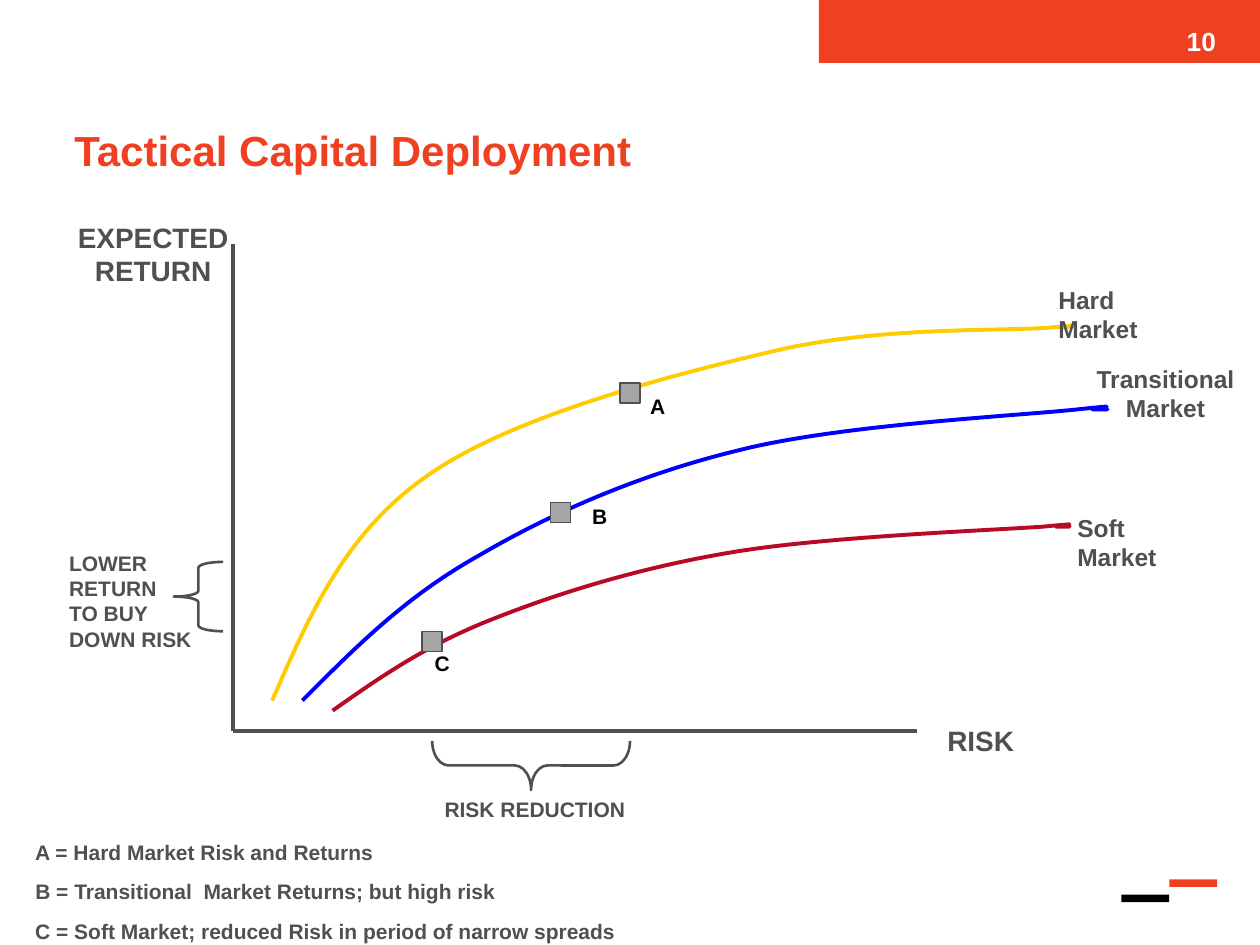
from pptx import Presentation
from pptx.dml.color import RGBColor
from pptx.enum.shapes import MSO_CONNECTOR as Connector, MSO_SHAPE as Shape
from pptx.enum.text import MSO_ANCHOR as Anchor, MSO_AUTO_SIZE as AutoSize, PP_ALIGN as Align
from pptx.oxml.ns import qn
from pptx.util import Inches, Pt
from lxml.etree import SubElement

RED, GRAY, BLACK, WHITE = "EF4122", "505050", "000000", "FFFFFF"
SILVER, YELLOW, BLUE, CRIMSON = "A6A6A6", "FFCC00", "0000FF", "B80927"


def color(value):
    return RGBColor.from_string(value)


def apply(target, values):
    for name, value in values.items():
        setattr(target, name, value)


class Painter:
    """Holds the text style and the slide being drawn."""

    font = {"name": "Arial", "bold": True}

    def __init__(self, page):
        self.page = page

    def stroke(self, line, hue, width):
        line.color.rgb = color(hue)
        line.width = Pt(width)

    def shape(self, kind, place, fill=None, line=None, width=0.75, adjust=(), turn=0):
        item = self.page.shapes.add_shape(kind, *map(Inches, place))
        item.shadow.inherit = False
        item.rotation = turn
        for index, value in enumerate(adjust):
            item.adjustments[index] = value
        if fill:
            item.fill.solid()
            item.fill.fore_color.rgb = color(fill)
        else:
            item.fill.background()
        if line:
            self.stroke(item.line, line, width)
        else:
            item.line.fill.background()

    def axis(self, start, end):
        line = self.page.shapes.add_connector(Connector.STRAIGHT, *map(Inches, start + end))
        self.stroke(line.line, GRAY, 2.25)
        SubElement(line._element.spPr, qn("a:effectLst"))

    def curve(self, points, hue):
        start, *rest = [(Inches(x), Inches(y)) for x, y in points]
        builder = self.page.shapes.build_freeform(*start)
        builder.add_line_segments(rest, close=False)
        item = builder.convert_to_shape()
        item.shadow.inherit = False
        item.fill.background()
        self.stroke(item.line, hue, 2.25)
        outline = item._element.spPr.find(".//" + qn("a:path"))
        segments = outline.findall(qn("a:lnTo"))
        for index in range(0, len(segments), 3):
            bezier = SubElement(outline, qn("a:cubicBezTo"))
            for segment in segments[index:index + 3]:
                bezier.append(segment[0])
                outline.remove(segment)

    def text(self, place, lines, size, hue=GRAY, inset=(0.01, 0.01), align=Align.LEFT,
             anchor=Anchor.TOP, wrap=False, fit=AutoSize.SHAPE_TO_FIT_TEXT):
        box = self.page.shapes.add_textbox(*map(Inches, place))
        frame = box.text_frame
        side, top = map(Inches, inset)
        apply(frame, {"word_wrap": wrap, "auto_size": fit, "vertical_anchor": anchor,
                      "margin_left": side, "margin_right": side,
                      "margin_top": top, "margin_bottom": top})
        for index, line in enumerate(lines):
            para = frame.add_paragraph() if index else frame.paragraphs[0]
            para.alignment = align
            span = para.add_run()
            span.text = line
            apply(span.font, {**self.font, "size": Pt(size)})
            span.font.color.rgb = color(hue)


def main():
    deck = Presentation()
    deck.slide_width, deck.slide_height = Inches(10), Inches(7.5)
    painter = Painter(deck.slides.add_slide(deck.slide_layouts[6]))
    roomy, flush = (0.1, 0.05), (0, 0)

    painter.shape(Shape.RECTANGLE, (9.28, 6.98, 0.38, 0.06), RED)
    painter.shape(Shape.RECTANGLE, (8.9, 7.1, 0.38, 0.06), BLACK)
    painter.shape(Shape.RECTANGLE, (6.5, 0, 3.5, 0.5), RED)
    painter.text((9.33, 0.2, 0.32, 0.25), ["10"], 15, WHITE, flush, Align.RIGHT,
                 Anchor.BOTTOM, True, AutoSize.NONE)
    painter.text((0.59, 0.99, 9.06, 0.47), ["Tactical Capital Deployment"], 24, RED, flush,
                 Align.LEFT, Anchor.TOP, True, AutoSize.NONE)

    origin = (1.85, 5.8)
    painter.axis((1.85, 1.94), origin)
    painter.axis(origin, (7.28, 5.8))

    hard = [(2.16, 5.56), (2.45, 4.9), (2.73, 4.23), (3.4, 3.77), (4.07, 3.3), (5.35, 2.97),
            (6.17, 2.78), (6.99, 2.59), (7.95, 2.63), (8.33, 2.6), (8.7, 2.57), (8.41, 2.6),
            (8.43, 2.6)]
    transitional = [(2.4, 5.56), (2.81, 5.15), (3.21, 4.74), (3.8, 4.41), (4.38, 4.07),
                    (5.09, 3.76), (5.88, 3.57), (6.68, 3.37), (8.09, 3.3), (8.55, 3.25),
                    (9.02, 3.2), (8.63, 3.25), (8.67, 3.25), (8.71, 3.25), (8.79, 3.25),
                    (8.79, 3.25), (8.79, 3.25), (8.69, 3.25), (8.67, 3.25)]
    soft = [(2.64, 5.64), (3.01, 5.38), (3.38, 5.12), (3.92, 4.91), (4.45, 4.7), (5.1, 4.5),
            (5.83, 4.38), (6.56, 4.26), (7.85, 4.21), (8.28, 4.18), (8.7, 4.14), (8.35, 4.18),
            (8.38, 4.18), (8.42, 4.18), (8.49, 4.18), (8.49, 4.18), (8.49, 4.18), (8.4, 4.18),
            (8.38, 4.18)]
    for points, hue in ((soft, CRIMSON), (hard, YELLOW), (transitional, BLUE)):
        painter.curve(points, hue)

    markers = (("A", (4.92, 3.04), (5.15, 3.11)),
               ("B", (4.37, 3.99), (4.69, 3.99)),
               ("C", (3.35, 5.01), (3.44, 5.15)))
    for letter, corner, label in markers:
        painter.shape(Shape.RECTANGLE, corner + (0.16, 0.16), SILVER, GRAY)
        painter.text(label + (0.14, 0.22), [letter], 12, BLACK)

    painter.text((8.39, 2.25, 1, 0.48), ["Hard Market"], 14, wrap=True)
    painter.text((8.69, 2.88, 1.12, 0.73), ["Transitional", "Market"], 14,
                 align=Align.CENTER, wrap=True)
    painter.text((8.54, 4.06, 1, 0.48), ["Soft Market"], 14, wrap=True)

    painter.text((0.47, 1.7, 1.49, 0.64), ["EXPECTED", "RETURN"], 16, inset=roomy,
                 align=Align.CENTER, wrap=True)
    painter.text((7.42, 5.69, 0.79, 0.37), ["RISK"], 16, inset=roomy)
    painter.text((0.45, 4.32, 1.18, 0.91), ["LOWER", "RETURN", "TO BUY", "DOWN RISK"], 12,
                 inset=roomy)
    painter.text((3.43, 6.27, 1.64, 0.3), ["RISK REDUCTION"], 12, inset=roomy)
    painter.shape(Shape.LEFT_BRACE, (1.38, 4.46, 0.39, 0.55), line=GRAY, width=1.5,
                  adjust=(0.117, 0.5))
    painter.shape(Shape.RIGHT_BRACE, (4.02, 5.29, 0.39, 1.57), line=GRAY, width=1.5,
                  adjust=(0.334, 0.5), turn=90)

    legend = (("A = Hard Market Risk and Returns", 4.33),
              ("B = Transitional  Market Returns; but high risk", 3.69),
              ("C = Soft Market; reduced Risk in period of narrow spreads", 4.63))
    for row, (line, width) in enumerate(legend):
        painter.text((0.27, 6.65 + row * 0.315, width, 0.22), [line], 12, wrap=True)

    deck.save("out.pptx")


if __name__ == "__main__":
    main()
